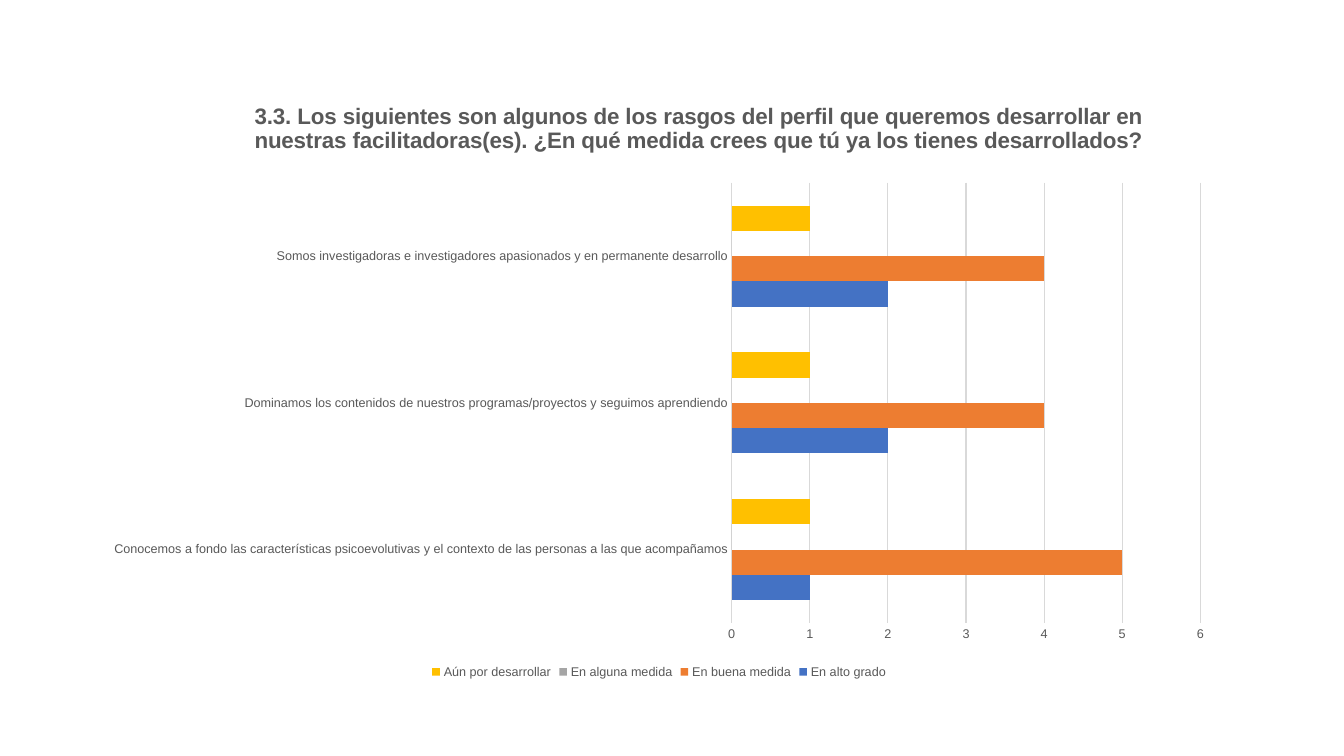
from lxml import etree
from pptx import Presentation
from pptx.chart.data import CategoryChartData
from pptx.dml.color import RGBColor
from pptx.enum.chart import XL_CHART_TYPE, XL_LEGEND_POSITION, XL_TICK_MARK
from pptx.oxml.ns import qn
from pptx.util import Cm, Pt

BAR_CLUSTERED = XL_CHART_TYPE.BAR_CLUSTERED
LEGEND_BOTTOM = XL_LEGEND_POSITION.BOTTOM
NO_TICK = XL_TICK_MARK.NONE

# Content
QUESTION = ("3.3. Los siguientes son algunos de los rasgos del perfil que queremos "
            "desarrollar en nuestras facilitadoras(es). ¿En qué medida crees que tú "
            "ya los tienes desarrollados?")
TRAITS = [
    "Conocemos a fondo las características psicoevolutivas y el contexto "
    "de las personas a las que acompañamos",
    "Dominamos los contenidos de nuestros programas/proyectos y seguimos aprendiendo",
    "Somos investigadoras e investigadores apasionados y en permanente desarrollo",
]
ANSWERS = {
    "En alto grado": (1, 2, 2),
    "En buena medida": (5, 4, 4),
    "En alguna medida": (0, 0, 0),
    "Aún por desarrollar": (1, 1, 1),
}
COLORS = {
    "En alto grado": "4472C4",
    "En buena medida": "ED7D31",
    "En alguna medida": "A5A5A5",
    "Aún por desarrollar": "FFC000",
    "text": "595959",
    "line": "D9D9D9",
}

# Places: chart frame in cm, inner parts as fractions of the frame
FRAME = [Cm(v) for v in (2.31, 2.31, 28.6, 14.91)]
TITLE_PLACE = {"x": 0.14, "y": 0.01}
PLOT_PLACE = {"x": 0.564, "y": 0.154, "w": 0.413, "h": 0.744}


def color(key):
    return RGBColor.from_string(COLORS[key])


def format_font(font, size=9, bold=False):
    font.name = "Arial"
    font.size = Pt(size)
    font.bold = bold
    font.color.rgb = color("text")


def write_text(frame, text, **font_format):
    frame.text = text
    format_font(frame.paragraphs[0].runs[0].font, **font_format)


def draw_line(line):
    line.color.rgb = color("line")
    line.width = Pt(0.75)


def place(part, index, fractions, inner=False):
    for old in part.findall(qn("c:layout")):
        part.remove(old)
    layout = etree.Element(qn("c:layout"))
    manual = etree.SubElement(layout, qn("c:manualLayout"))
    settings = [("layoutTarget", "inner")] if inner else []
    settings += [("xMode", "edge"), ("yMode", "edge"), *fractions.items()]
    for tag, value in settings:
        etree.SubElement(manual, qn(f"c:{tag}")).set("val", str(value))
    part.insert(index, layout)


deck = Presentation()
deck.slide_width, deck.slide_height = Cm(33.87), Cm(19.05)
slide = deck.slides.add_slide(deck.slide_layouts[6])

# Chart and its bars
survey = CategoryChartData()
survey.categories = TRAITS
for answer, counts in ANSWERS.items():
    survey.add_series(answer, counts)
chart = slide.shapes.add_chart(BAR_CLUSTERED, *FRAME, survey).chart
format_font(chart.font)
bars = chart.plots[0]
bars.gap_width = 182
bars.overlap = 0
bars.vary_by_categories = False
for answer in bars.series:
    answer.format.fill.solid()
    answer.format.fill.fore_color.rgb = color(answer.name)

# Title
chart.has_title = True
write_text(chart.chart_title.text_frame, QUESTION, size=16, bold=True)
chart.chart_title.include_in_layout = False
place(chart.chart_title.format.fill and chart.element.find(".//" + qn("c:title")),
      1, TITLE_PLACE)
place(chart.element.find(".//" + qn("c:plotArea")), 0, PLOT_PLACE, inner=True)

# Axes
traits_axis, counts_axis = chart.category_axis, chart.value_axis
for axis in (traits_axis, counts_axis):
    axis.major_tick_mark = axis.minor_tick_mark = NO_TICK
    format_font(axis.tick_labels.font)
draw_line(traits_axis.format.line)
counts_axis.format.line.fill.background()
counts_axis.has_major_gridlines = True
draw_line(counts_axis.major_gridlines.format.line)
counts_axis.minimum_scale, counts_axis.maximum_scale = 0, 6
counts_axis.major_unit = 1

# Legend
chart.has_legend = True
chart.legend.position = LEGEND_BOTTOM
chart.legend.include_in_layout = False
format_font(chart.legend.font)

deck.save("out.pptx")
